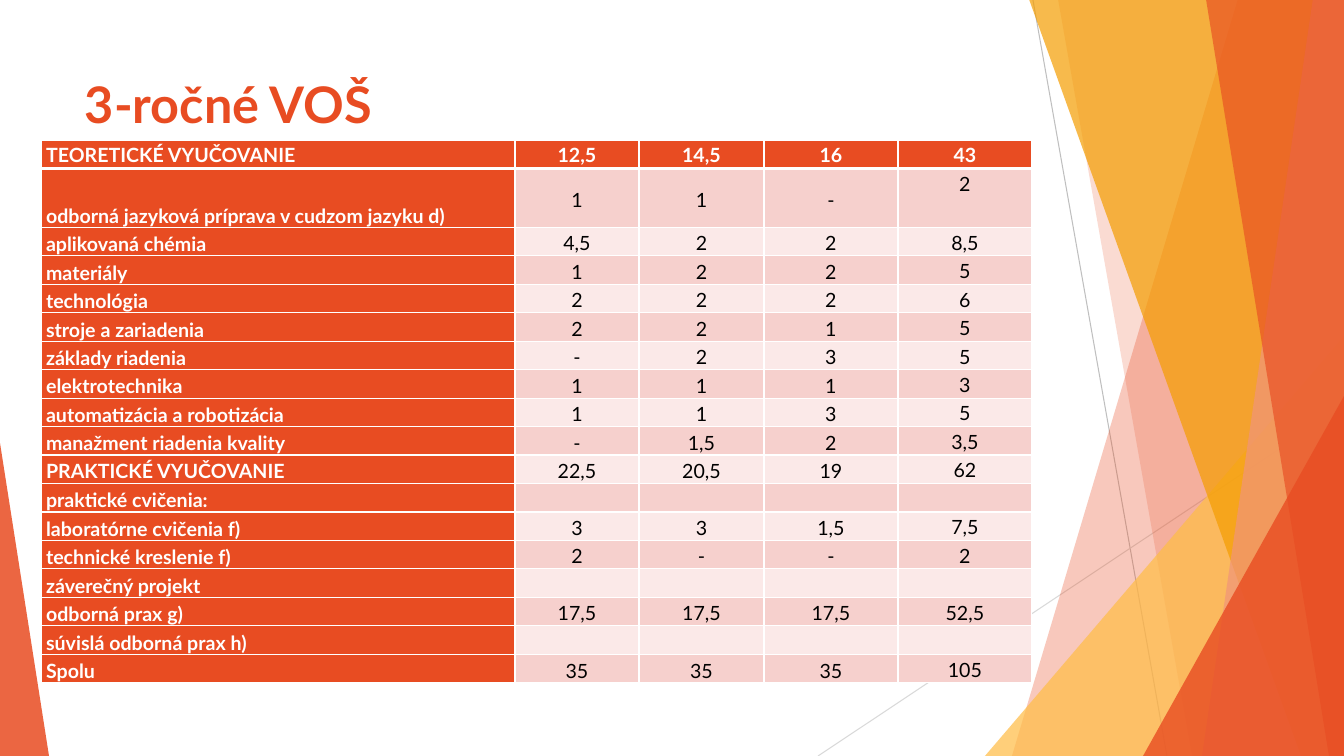
from lxml import etree
from pptx import Presentation
from pptx import util as u
from pptx.dml import color
from pptx.enum import shapes, text
from pptx.oxml import ns

PAGE_WIDTH, PAGE_HEIGHT = 1344, 756
SCALE = u.Inches(7.5) / PAGE_HEIGHT
FONT = "Lato"
ORANGE, WHITE, BLACK = "E84C22", "FFFFFF", "000000"
BANDS = ("FBE9E8", "F6D0CD")
COLUMNS = (474, 124, 125, 134, 134)
TALL_ROW, TALL_HEIGHT = 1, 59
SUBJECTS = [
    ("TEORETICKÉ VYUČOVANIE", "12,5", "14,5", "16", "43"),
    ("odborná jazyková príprava v cudzom jazyku d)", "1", "1", "-", "2"),
    ("aplikovaná chémia", "4,5", "2", "2", "8,5"),
    ("materiály", "1", "2", "2", "5"),
    ("technológia", "2", "2", "2", "6"),
    ("stroje a zariadenia", "2", "2", "1", "5"),
    ("základy riadenia", "-", "2", "3", "5"),
    ("elektrotechnika", "1", "1", "1", "3"),
    ("automatizácia a robotizácia", "1", "1", "3", "5"),
    ("manažment riadenia kvality", "-", "1,5", "2", "3,5"),
    ("PRAKTICKÉ VYUČOVANIE", "22,5", "20,5", "19", "62"),
    ("praktické cvičenia:", "", "", "", ""),
    ("laboratórne cvičenia f)", "3", "3", "1,5", "7,5"),
    ("technické kreslenie f)", "2", "-", "-", "2"),
    ("záverečný projekt", "", "", "", ""),
    ("odborná prax g)", "17,5", "17,5", "17,5", "52,5"),
    ("súvislá odborná prax h)", "", "", "", ""),
    ("Spolu", "35", "35", "35", "105"),
]


def px(*lengths):
    return [u.Emu(round(length * SCALE)) for length in lengths]


def rgb(value):
    return color.RGBColor.from_string(value)


def paint(shape, fill, opacity):
    shape.shadow.inherit = False
    shape.line.fill.background()
    shape.fill.solid()
    shape.fill.fore_color.rgb = rgb(fill)
    tint = shape.fill._xPr.find(".//" + ns.qn("a:srgbClr"))
    etree.SubElement(tint, ns.qn("a:alpha"), val=str(opacity * 1000))


def write(frame, words, size=14, fill=BLACK, bold=False,
          align=text.PP_ALIGN.LEFT, spacing=1.0, after=0):
    para = frame.paragraphs[0]
    para.alignment = align
    para.line_spacing = spacing
    para.space_after = u.Pt(after)
    if not words:
        etree.SubElement(para._p, ns.qn("a:endParaRPr"), sz=str(size * 100))
        return
    span = para.add_run()
    span.text = words
    span.font.name = FONT
    span.font.size = u.Pt(size)
    span.font.bold = bold
    span.font.color.rgb = rgb(fill)


def add_line(page, start, end, fill):
    line = page.shapes.add_connector(
        shapes.MSO_CONNECTOR.STRAIGHT, *px(*start, *end))
    line.line.color.rgb = rgb(fill)
    line.line.width = u.Pt(0.75)
    etree.SubElement(line._element.spPr, ns.qn("a:effectLst"))


def add_triangle(page, box, apex, fill, opacity):
    triangle = page.shapes.add_shape(
        shapes.MSO_SHAPE.ISOSCELES_TRIANGLE, *px(*box))
    triangle.adjustments[0] = apex
    paint(triangle, fill, opacity)


def add_right_facets(page, box):
    left, top, width, height = box
    right, bottom = left + width, top + height

    def add_facet(top_width, bottom_width, fill, opacity):
        builder = page.shapes.build_freeform(
            right - top_width, top - 1, scale=SCALE)
        builder.add_line_segments([
            (right, top - 1), (right, bottom), (right - bottom_width, bottom)])
        paint(builder.convert_to_shape(), fill, opacity)

    def add_corner(wide, high, fill, opacity):
        corner = (right - wide, bottom - high, wide, high)
        add_triangle(page, corner, 1, fill, opacity)

    add_line(page, (right - 311, top), (right - 177, bottom), "BFBFBF")
    add_line(page, (right, top + 406), (left, bottom), "D9D9D9")
    add_facet(106, 332, ORANGE, 30)
    add_facet(286, 152, ORANGE, 20)
    add_corner(359, 420, "FFBD47", 72)
    add_facet(315, 43, "F49D00", 70)
    add_facet(31, 142, "F1947A", 70)
    add_facet(138, 15, ORANGE, 65)
    add_corner(201, 360, ORANGE, 80)


def add_title(page, box):
    title = page.shapes.add_textbox(*px(*box))
    title.text_frame.word_wrap = True
    write(title.text_frame, "3-ročné VOŠ", size=36, fill=ORANGE, bold=True)


def add_borders(cell, row):
    props = cell._tc.get_or_add_tcPr()
    thick = {"lnB": row == 0, "lnT": row == 1}
    for side in ("lnL", "lnR", "lnT", "lnB"):
        width = u.Pt(3 if thick.get(side) else 1)
        line = etree.SubElement(props, ns.qn("a:" + side), w=str(width))
        solid = etree.SubElement(line, ns.qn("a:solidFill"))
        etree.SubElement(solid, ns.qn("a:srgbClr"), val=WHITE)


def cell_anchor(row, column):
    if row == 0 or column == len(COLUMNS) - 1:
        return text.MSO_ANCHOR.TOP
    if row == len(SUBJECTS) - 1:
        return text.MSO_ANCHOR.BOTTOM
    if column == 0 and not SUBJECTS[row][0].isupper():
        return text.MSO_ANCHOR.BOTTOM
    return text.MSO_ANCHOR.MIDDLE


def fill_cell(cell, words, row, column):
    strong = row == 0 or column == 0
    add_borders(cell, row)
    cell.fill.solid()
    cell.fill.fore_color.rgb = rgb(ORANGE if strong else BANDS[row % 2])
    cell.margin_left = cell.margin_right = u.Inches(0.05)
    cell.margin_top = cell.margin_bottom = 0
    cell.vertical_anchor = cell_anchor(row, column)
    write(cell.text_frame, words, fill=WHITE if strong else BLACK, bold=strong,
          align=text.PP_ALIGN.CENTER if column else text.PP_ALIGN.LEFT,
          spacing=1.15, after=10)


def add_timetable(page, box):
    height = box[3]
    table = page.shapes.add_table(
        len(SUBJECTS), len(COLUMNS), *px(*box)).table
    for column, width in zip(table.columns, COLUMNS):
        column.width, = px(width)
    row_height = (height - TALL_HEIGHT) / (len(SUBJECTS) - 1)
    for row, subject in enumerate(SUBJECTS):
        table.rows[row].height, = px(
            TALL_HEIGHT if row == TALL_ROW else row_height)
        for column, words in enumerate(subject):
            fill_cell(table.cell(row, column), words, row, column)


def main():
    deck = Presentation()
    deck.slide_width, deck.slide_height = px(PAGE_WIDTH, PAGE_HEIGHT)
    page = deck.slides.add_slide(deck.slide_layouts[6])
    add_right_facets(page, (818, 0, 526, PAGE_HEIGHT))
    add_triangle(page, (0, 443, 49, 313), 0, ORANGE, 85)
    add_title(page, (75, 68, 948, 145))
    add_timetable(page, (41, 140, sum(COLUMNS), 543))
    deck.save("out.pptx")


if __name__ == "__main__":
    main()
